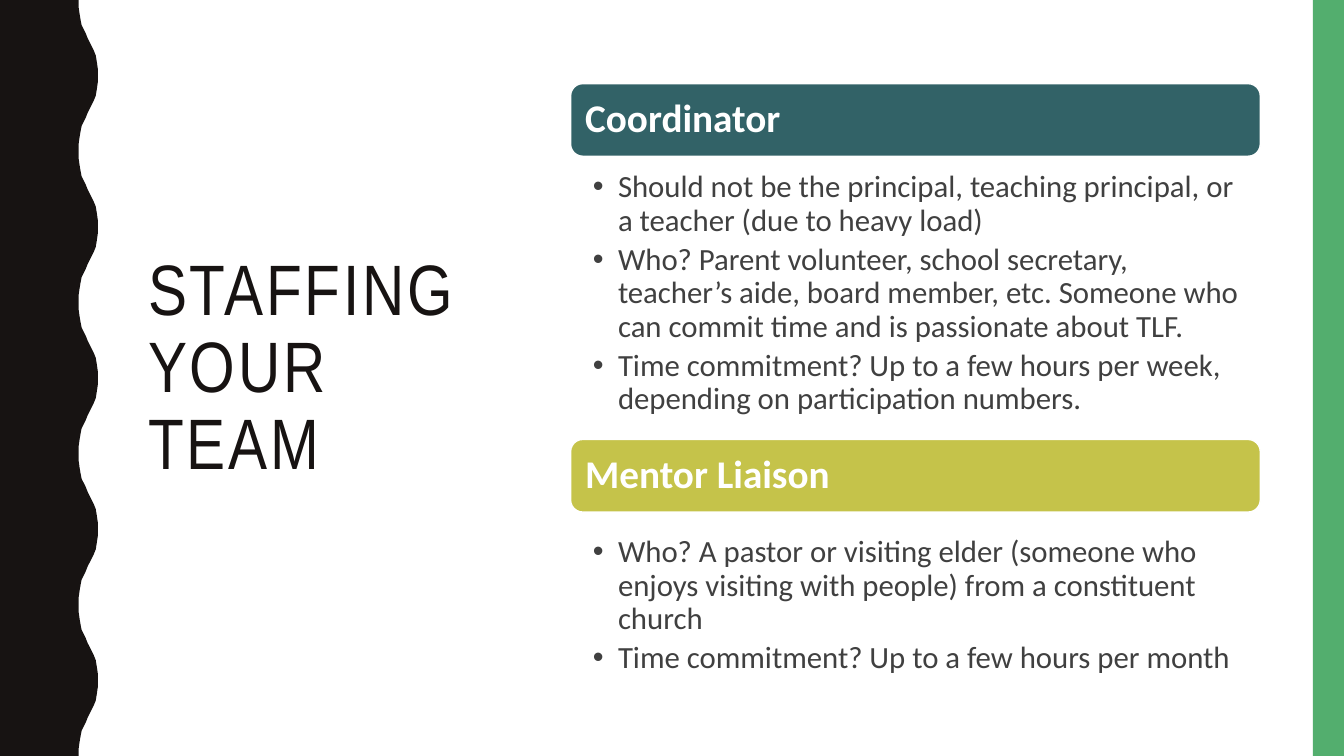
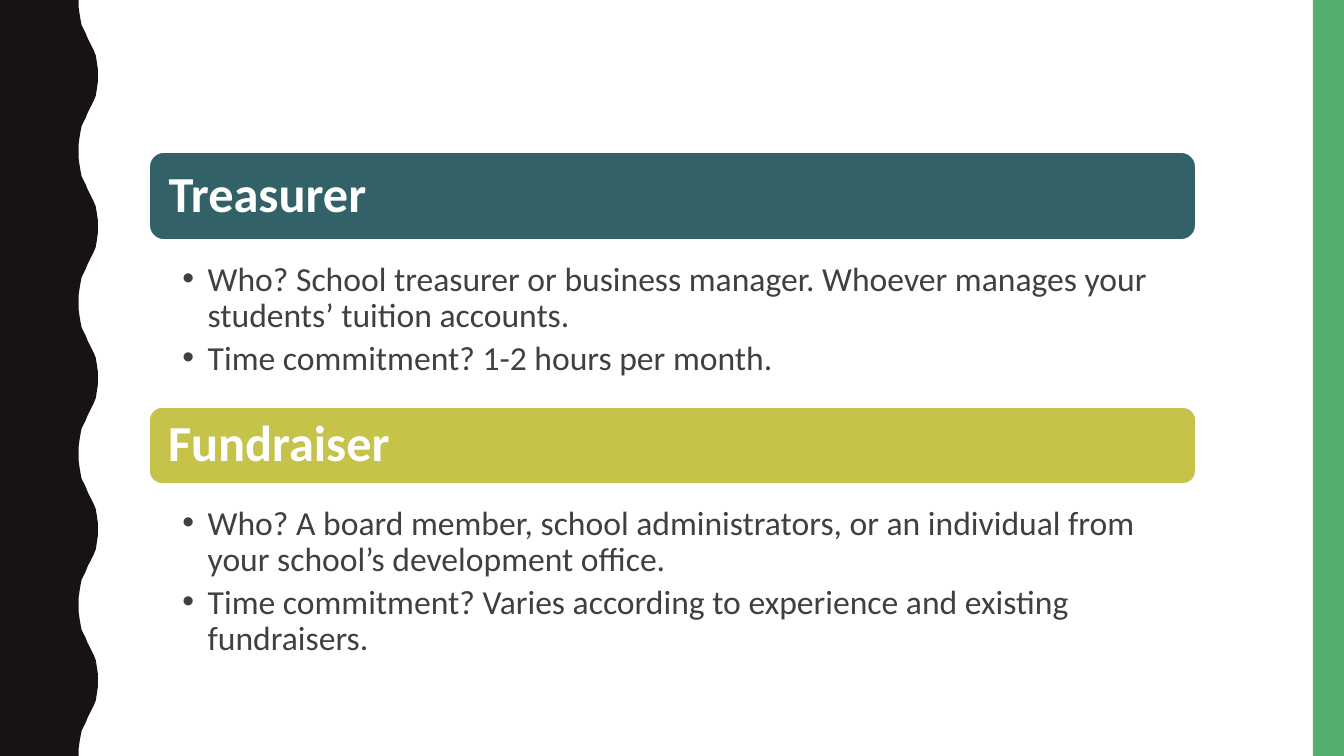
from dataclasses import dataclass

from lxml.etree import SubElement
from pptx import Presentation
from pptx.dml.color import RGBColor
from pptx.enum.shapes import MSO_SHAPE as Shape
from pptx.enum.text import MSO_ANCHOR as Anchor, MSO_AUTO_SIZE as AutoSize, PP_ALIGN as Align
from pptx.oxml.ns import qn
from pptx.util import Inches, Pt

INK = RGBColor(0x17, 0x13, 0x12)
GREEN = RGBColor(0x53, 0xAE, 0x6E)
TEAL = RGBColor(0x32, 0x62, 0x67)
OLIVE = RGBColor(0xC5, 0xC3, 0x4A)
GREY = RGBColor(0x40, 0x40, 0x40)
WHITE = RGBColor(0xFF, 0xFF, 0xFF)

TITLE_FONT = "Arial Narrow"
BODY_FONT = "Calibri"
WIDTH, HEIGHT = 13.33, 7.5
TITLE_ONLY, BLANK = 5, 6

WAVE_PERIOD = 1.5
WAVE_RISE = [
    (0.78, 0), (0.78, 0.07), (0.79, 0.14), (0.8, 0.2), (0.81, 0.25),
    (0.83, 0.29), (0.85, 0.33), (0.87, 0.38), (0.89, 0.42), (0.91, 0.46),
    (0.93, 0.5), (0.95, 0.55), (0.96, 0.61), (0.97, 0.68), (0.97, 0.75),
]


@dataclass(frozen=True)
class RoleStyle:
    left: float
    width: float
    heading_size: int
    heading_inset: float
    body_size: int
    body_left_inset: float
    body_right_inset: float
    body_top_inset: float


@dataclass(frozen=True)
class Role:
    name: str
    color: RGBColor
    top: float
    height: float
    body_top: float
    body_height: float
    points: tuple[str, ...]


TEAM_STYLE = RoleStyle(5.66, 6.84, 28, 0.11, 22, 0.22, 0.18, 0.04)
FINANCE_STYLE = RoleStyle(1.48, 10.38, 36, 0.15, 24, 0.33, 0.19, 0.03)

TEAM_ROLES = [
    Role("Coordinator", TEAL, 0.83, 0.72, 1.66, 2.47, (
        "Should not be the principal, teaching principal, or a teacher (due to heavy load)",
        "Who? Parent volunteer, school secretary, teacher’s aide, board member, etc. "
        "Someone who can commit time and is passionate about TLF.",
        "Time commitment? Up to a few hours per week, depending on participation numbers.",
    )),
    Role("Mentor Liaison", OLIVE, 4.36, 0.72, 5.28, 1.41, (
        "Who? A pastor or visiting elder (someone who enjoys visiting with people) "
        "from a constituent church",
        "Time commitment? Up to a few hours per month",
    )),
]

FINANCE_ROLES = [
    Role("Treasurer", TEAL, 1.51, 0.87, 2.57, 1.2, (
        "Who? School treasurer or business manager. "
        "Whoever manages your students’ tuition accounts.",
        "Time commitment? 1-2 hours per month.",
    )),
    Role("Fundraiser", OLIVE, 4.04, 0.76, 4.99, 1.53, (
        "Who? A board member, school administrators, or an individual from "
        "your school’s development office.",
        "Time commitment? Varies according to experience and existing fundraisers.",
    )),
]


def paint(shape, color: RGBColor) -> None:
    shape.shadow.inherit = False
    shape.fill.solid()
    shape.fill.fore_color.rgb = color
    shape.line.fill.background()


def write(para, text: str, size: int, font: str, color: RGBColor, bold: bool = False):
    para.alignment = Align.LEFT
    para.line_spacing = 0.9
    span = para.add_run()
    span.text = text
    span.font.size = Pt(size)
    span.font.name = font
    span.font.color.rgb = color
    span.font.bold = bold
    return span


def add_bullet(para) -> None:
    props = para._p.get_or_add_pPr()
    props.set("marL", str(Inches(0.25)))
    props.set("indent", str(-Inches(0.25)))
    SubElement(props, qn("a:buFont"), typeface="Arial")
    SubElement(props, qn("a:buChar"), char="•")


def draw_edges(page) -> None:
    half = WAVE_RISE + [(x, WAVE_PERIOD - y) for x, y in WAVE_RISE[-2::-1]]
    waves = round(HEIGHT / WAVE_PERIOD)
    outline = [(x, y + wave * WAVE_PERIOD) for wave in range(waves) for x, y in half]
    outline.append((0, HEIGHT))
    builder = page.shapes.build_freeform(0, 0)
    builder.add_line_segments([(Inches(x), Inches(y)) for x, y in outline], close=True)
    paint(builder.convert_to_shape(), INK)
    stripe = page.shapes.add_shape(
        Shape.RECTANGLE, Inches(13.02), 0, Inches(WIDTH - 13.02), Inches(HEIGHT))
    paint(stripe, GREEN)


def draw_title(page, text: str) -> None:
    title = page.shapes.title
    title.left, title.top = Inches(1.37), Inches(0.71)
    title.width, title.height = Inches(3.7), Inches(5.91)
    frame = title.text_frame
    frame.word_wrap = True
    frame.auto_size = AutoSize.NONE
    frame.vertical_anchor = Anchor.MIDDLE
    span = write(frame.paragraphs[0], text, 51, TITLE_FONT, INK)
    span._r.get_or_add_rPr().set("spc", "200")


def draw_role(page, role: Role, style: RoleStyle) -> None:
    left, width = Inches(style.left), Inches(style.width)
    band = page.shapes.add_shape(
        Shape.ROUNDED_RECTANGLE, left, Inches(role.top), width, Inches(role.height))
    paint(band, role.color)
    band.line.color.rgb = WHITE
    band.line.width = Pt(1)
    heading = band.text_frame
    heading.margin_left = heading.margin_right = Inches(style.heading_inset)
    heading.margin_top = heading.margin_bottom = 0
    heading.vertical_anchor = Anchor.MIDDLE
    write(heading.paragraphs[0], role.name, style.heading_size, BODY_FONT, WHITE, bold=True)

    box = page.shapes.add_textbox(left, Inches(role.body_top), width, Inches(role.body_height))
    frame = box.text_frame
    frame.word_wrap = True
    frame.margin_left = Inches(style.body_left_inset)
    frame.margin_right = Inches(style.body_right_inset)
    frame.margin_top = frame.margin_bottom = Inches(style.body_top_inset)
    for index, point in enumerate(role.points):
        para = frame.add_paragraph() if index else frame.paragraphs[0]
        write(para, point, style.body_size, BODY_FONT, GREY)
        para.space_after = Pt(style.body_size * 0.2)
        add_bullet(para)


def add_page(deck, layout: int, roles: list[Role], style: RoleStyle, title: str = "") -> None:
    page = deck.slides.add_slide(deck.slide_layouts[layout])
    draw_edges(page)
    if title:
        draw_title(page, title)
    for role in roles:
        draw_role(page, role, style)


def main() -> None:
    deck = Presentation()
    deck.slide_width, deck.slide_height = Inches(WIDTH), Inches(HEIGHT)
    add_page(deck, TITLE_ONLY, TEAM_ROLES, TEAM_STYLE, "STAFFING YOUR TEAM")
    add_page(deck, BLANK, FINANCE_ROLES, FINANCE_STYLE)
    deck.save("out.pptx")


if __name__ == "__main__":
    main()
